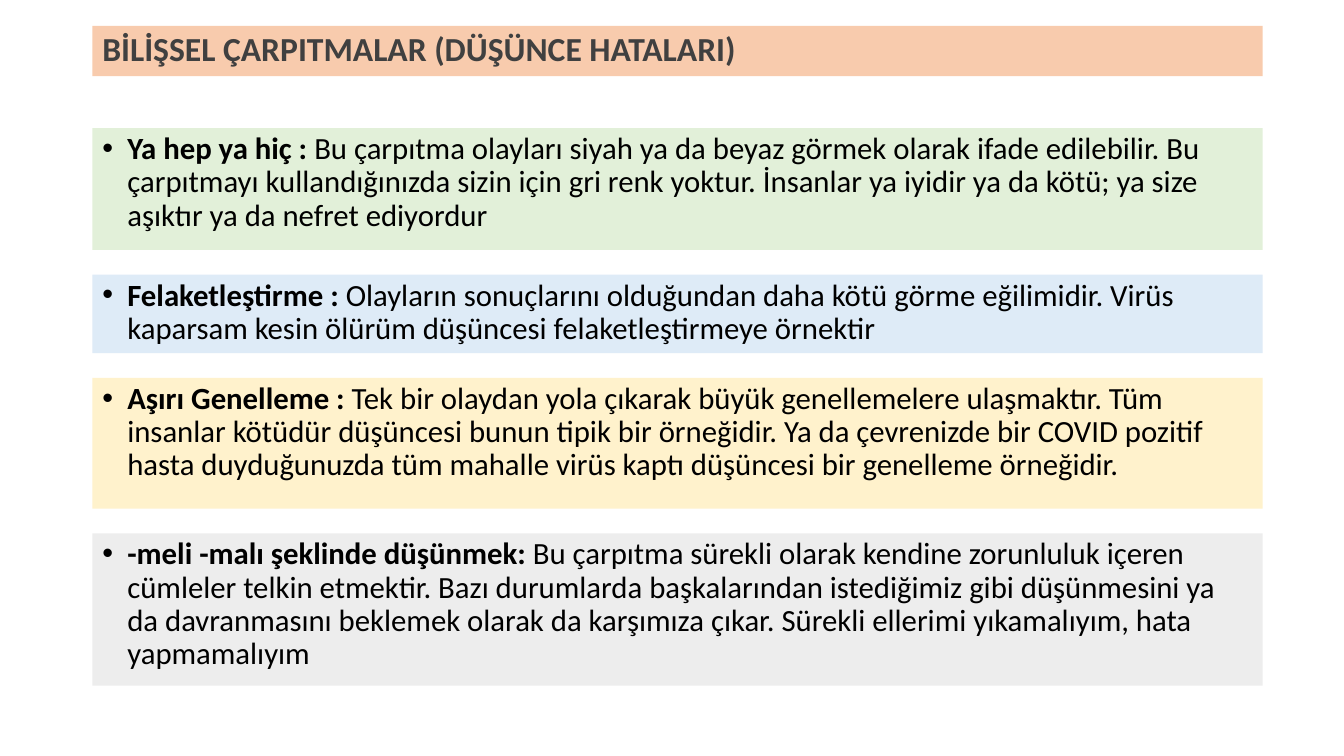
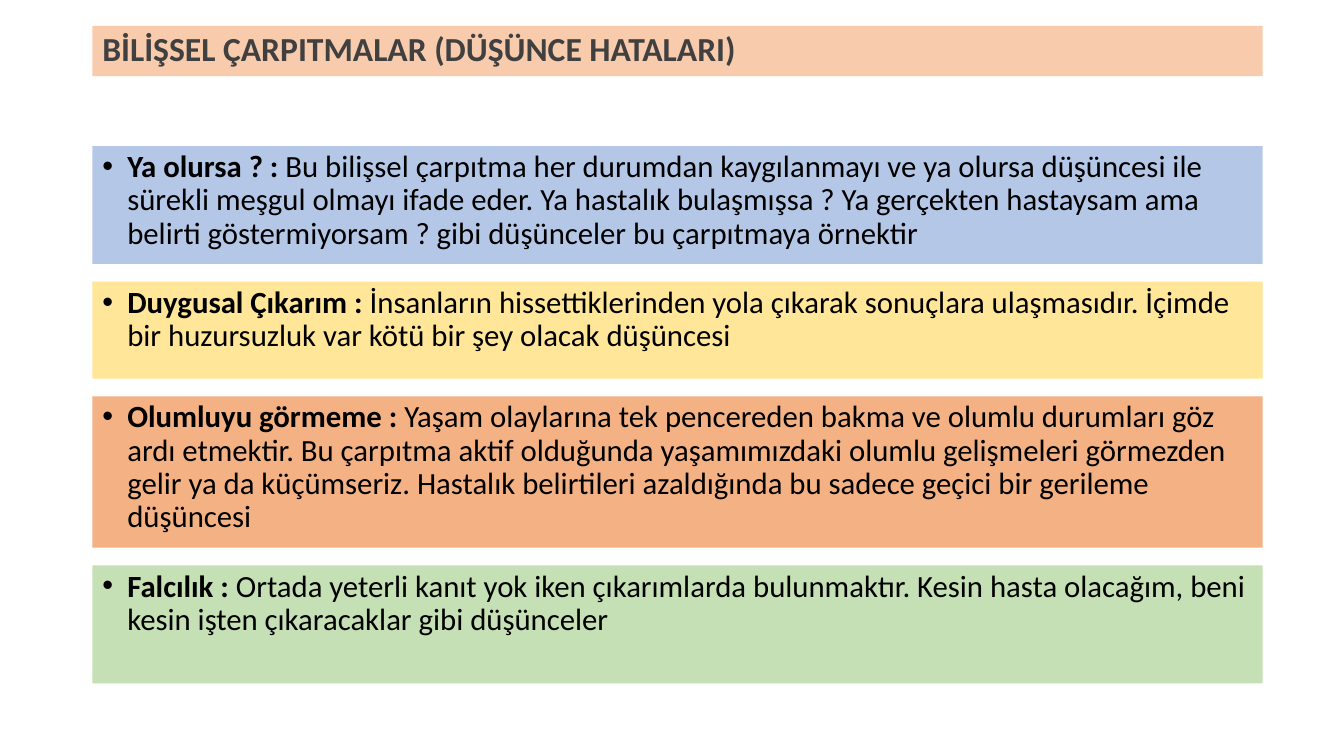
from lxml import etree
from pptx import Presentation
from pptx.dml.color import RGBColor
from pptx.enum.shapes import MSO_SHAPE
from pptx.enum.text import MSO_ANCHOR, PP_ALIGN
from pptx.oxml.ns import qn
from pptx.util import Cm, Pt

RECTANGLE = MSO_SHAPE.RECTANGLE
TOP, MIDDLE = MSO_ANCHOR.TOP, MSO_ANCHOR.MIDDLE
LEFT_ALIGN = PP_ALIGN.LEFT

LEFT, WIDTH = 2.33, 29.49
INDENT = Cm(0.63)
TITLE = "BİLİŞSEL ÇARPITMALAR (DÜŞÜNCE HATALARI)"
TITLE_COLOR = "F8CBAD"
TITLE_FONT = {"size": 24, "color": "404040"}
BODY_FONT = {"size": 22, "color": "000000"}

# Each page: top of the first panel, gap between panels,
# and the panels as (height, fill, term, explanation).
PAGES = [
    (3.23, 0.62, [
        (3.07, "E2F0D9", "Ya hep ya hiç : ",
         "Bu çarpıtma olayları siyah ya da beyaz görmek olarak ifade edilebilir. "
         "Bu çarpıtmayı kullandığınızda sizin için gri renk yoktur. İnsanlar ya iyidir "
         "ya da kötü; ya size aşıktır ya da nefret ediyordur"),
        (1.98, "DEEBF7", "Felaketleştirme : ",
         "Olayların sonuçlarını olduğundan daha kötü görme eğilimidir. Virüs kaparsam "
         "kesin ölürüm düşüncesi felaketleştirmeye örnektir"),
        (3.3, "FFF2CC", "Aşırı Genelleme : ",
         "Tek bir olaydan yola çıkarak büyük genellemelere ulaşmaktır. Tüm insanlar "
         "kötüdür düşüncesi bunun tipik bir örneğidir. Ya da çevrenizde bir COVID pozitif "
         "hasta duyduğunuzda tüm mahalle virüs kaptı düşüncesi bir genelleme örneğidir."),
        (3.84, "EDEDED", "-meli -malı şeklinde düşünmek: ",
         "Bu çarpıtma sürekli olarak kendine zorunluluk içeren cümleler telkin etmektir. "
         "Bazı durumlarda başkalarından istediğimiz gibi düşünmesini ya da davranmasını "
         "beklemek olarak da karşımıza çıkar. Sürekli ellerimi yıkamalıyım, hata "
         "yapmamalıyım"),
    ]),
    (3.68, 0.45, [
        (2.97, "B4C7E7", "Ya olursa ? : ",
         "Bu bilişsel çarpıtma her durumdan kaygılanmayı ve ya olursa düşüncesi ile "
         "sürekli meşgul olmayı ifade eder. Ya hastalık bulaşmışsa ? Ya gerçekten "
         "hastaysam ama belirti göstermiyorsam ? gibi düşünceler bu çarpıtmaya örnektir"),
        (2.44, "FFE699", "Duygusal Çıkarım : ",
         "İnsanların hissettiklerinden yola çıkarak sonuçlara ulaşmasıdır. İçimde bir "
         "huzursuzluk var kötü bir şey olacak düşüncesi"),
        (3.81, "F4B183", "Olumluyu görmeme : ",
         "Yaşam olaylarına tek pencereden bakma ve olumlu durumları göz ardı etmektir. "
         "Bu çarpıtma aktif olduğunda yaşamımızdaki olumlu gelişmeleri görmezden gelir "
         "ya da küçümseriz. Hastalık belirtileri azaldığında bu sadece geçici bir "
         "gerileme düşüncesi"),
        (2.97, "C5E0B4", "Falcılık : ",
         "Ortada yeterli kanıt yok iken çıkarımlarda bulunmaktır. Kesin hasta olacağım, "
         "beni kesin işten çıkaracaklar gibi düşünceler"),
    ]),
]


def rgb(color):
    return RGBColor.from_string(color)


def add_panel(page, top, height, fill, spans, font, anchor):
    """Add a full-width filled rectangle with (text, bold) spans; return its paragraph."""
    box = page.shapes.add_shape(RECTANGLE, Cm(LEFT), Cm(top), Cm(WIDTH), Cm(height))
    box.shadow.inherit = False
    box.fill.solid()
    box.fill.fore_color.rgb = rgb(fill)
    box.line.fill.background()
    box.text_frame.word_wrap = True
    box.text_frame.vertical_anchor = anchor
    para = box.text_frame.paragraphs[0]
    for name, value in {"alignment": LEFT_ALIGN, "line_spacing": 0.9}.items():
        setattr(para, name, value)
    for text, bold in spans:
        span = para.add_run()
        span.text = text
        for name, value in {"name": "Calibri", "size": Pt(font["size"]), "bold": bold}.items():
            setattr(span.font, name, value)
        span.font.color.rgb = rgb(font["color"])
    return para


deck = Presentation()
deck.slide_width, deck.slide_height = Cm(33.87), Cm(19.05)
blank = deck.slide_layouts[6]

for top, gap, panels in PAGES:
    page = deck.slides.add_slide(blank)
    add_panel(page, 0.65, 1.27, TITLE_COLOR, [(TITLE, True)], TITLE_FONT, MIDDLE)
    for height, fill, term, explanation in panels:
        spans = [(term, True), (explanation, False)]
        para = add_panel(page, top, height, fill, spans, BODY_FONT, TOP)
        para.space_before = Pt(10)
        properties = para._p.get_or_add_pPr()
        properties.set("marL", str(INDENT))
        properties.set("indent", str(-INDENT))
        etree.SubElement(properties, qn("a:buFont"), typeface="Arial")
        etree.SubElement(properties, qn("a:buChar"), char="•")
        top += height + gap

deck.save("out.pptx")
